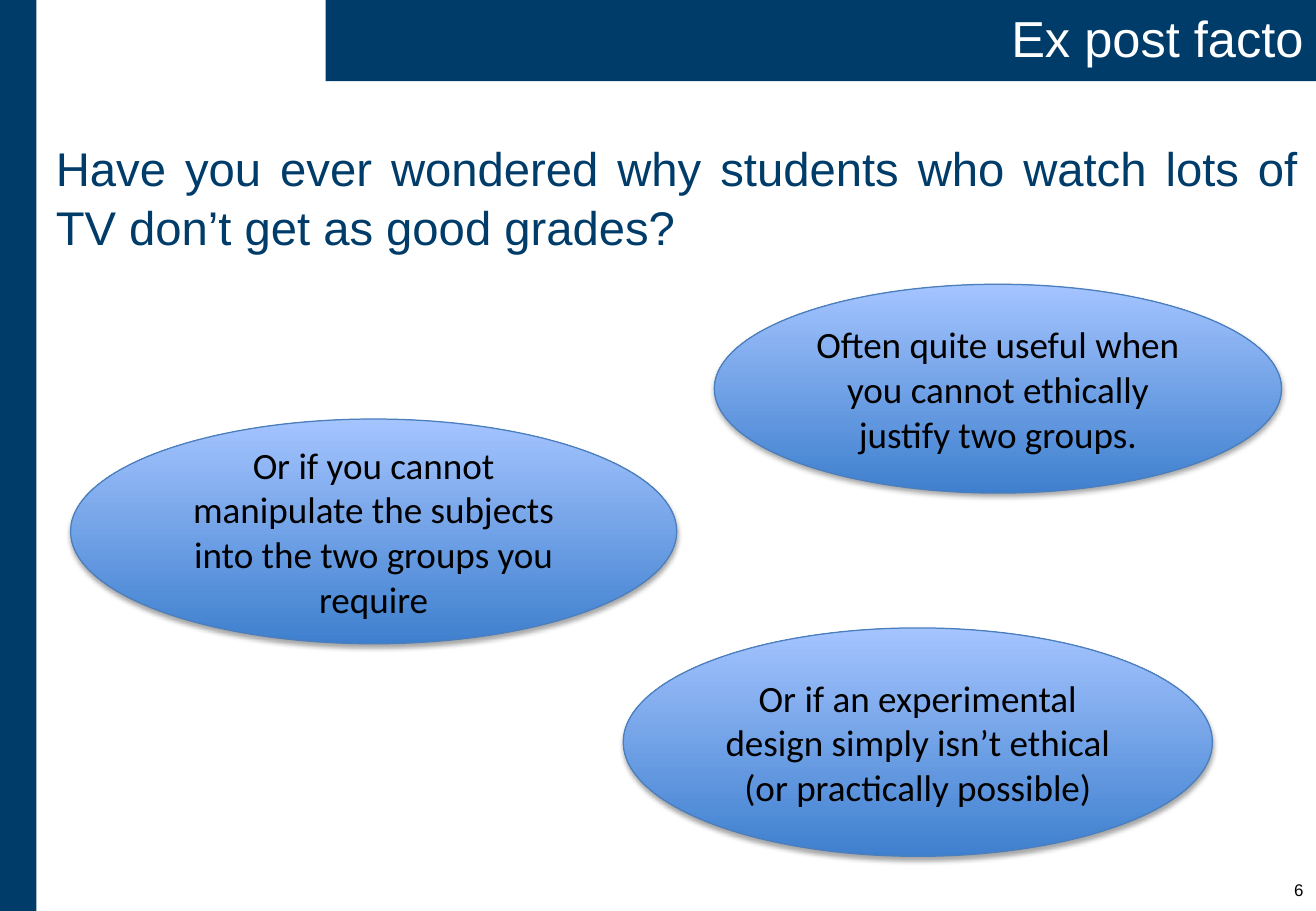
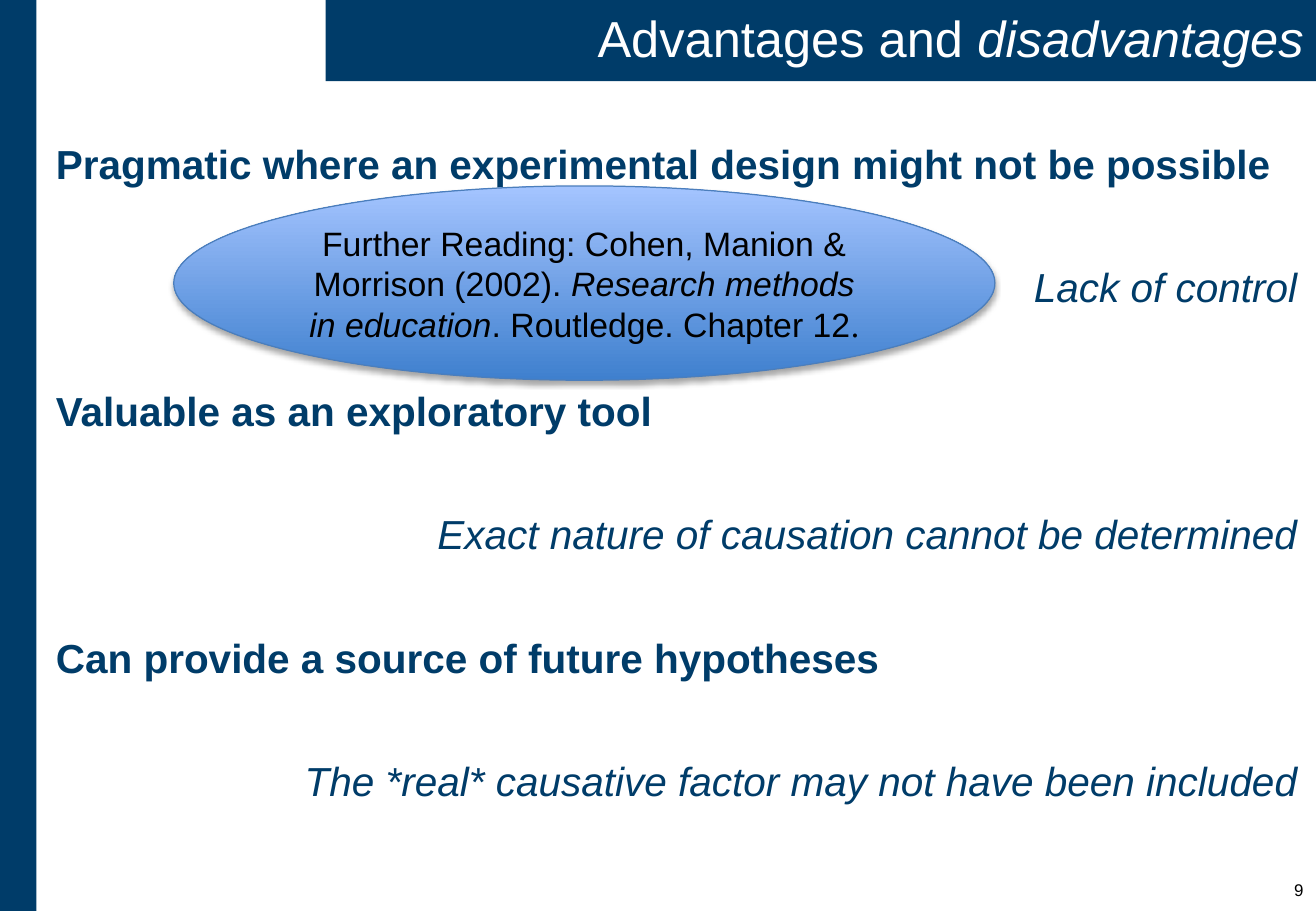
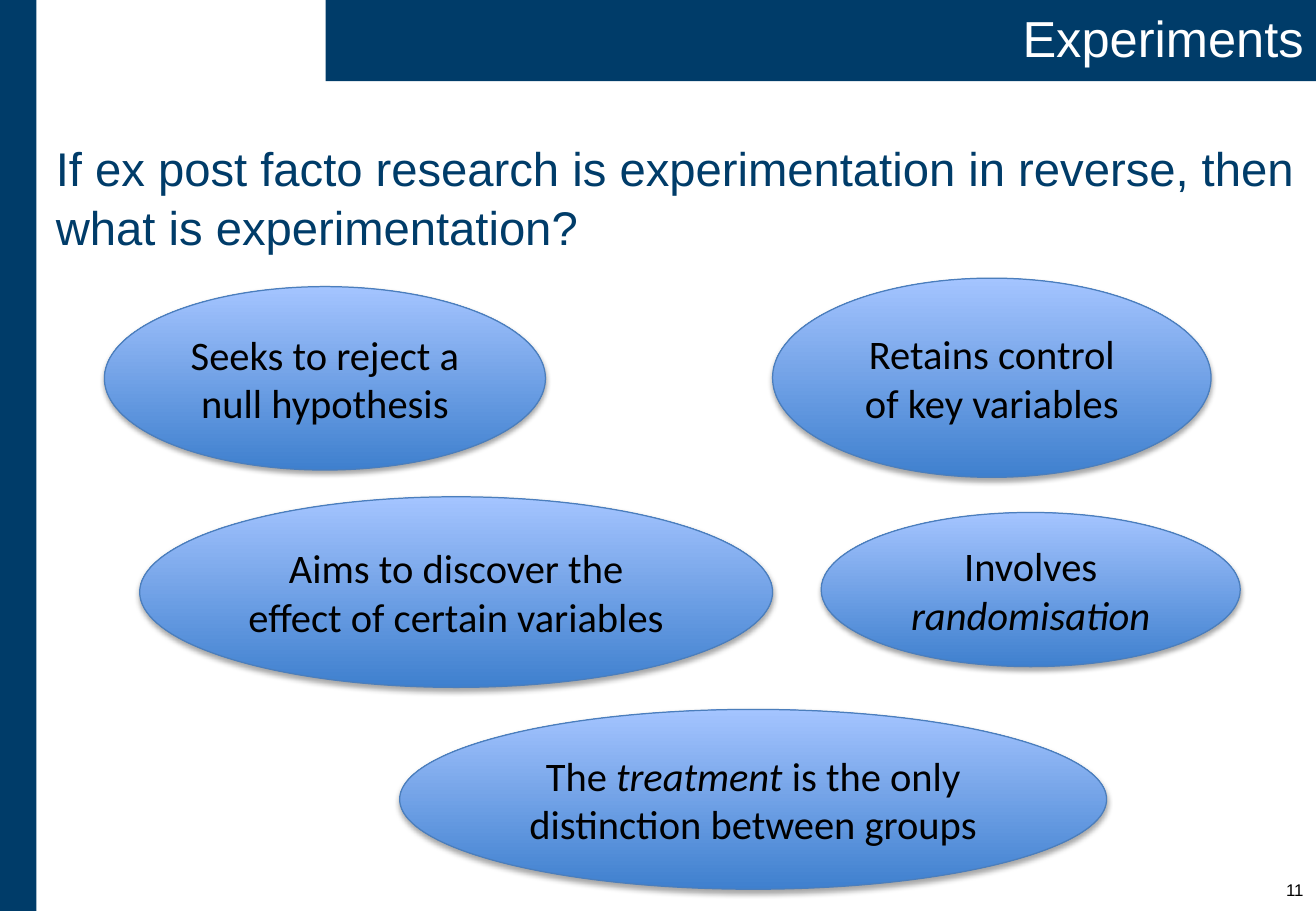
from dataclasses import dataclass

from lxml import etree
from pptx import Presentation
from pptx.dml.color import RGBColor
from pptx.enum import shapes, text
from pptx.oxml import ns
from pptx.util import Pt

LEFT, CENTER, RIGHT, JUSTIFY = (
    text.PP_ALIGN.LEFT, text.PP_ALIGN.CENTER, text.PP_ALIGN.RIGHT, text.PP_ALIGN.JUSTIFY)


@dataclass(frozen=True)
class Theme:
    navy: RGBColor = RGBColor(0x00, 0x3C, 0x69)
    white: RGBColor = RGBColor(0xFF, 0xFF, 0xFF)
    black: RGBColor = RGBColor(0, 0, 0)
    bubble_bottom: RGBColor = RGBColor(0x3F, 0x80, 0xCE)
    bubble_top: RGBColor = RGBColor(0xA4, 0xC4, 0xFF)
    bubble_edge: RGBColor = RGBColor(0x4B, 0x7E, 0xBC)
    sans: str = "Arial"
    bubble_font: str = "Calibri"
    title_size: float = 30
    question_size: float = 28
    point_size: float = 24
    number_size: float = 10
    line_spacing: float = 1.05
    point_gap: float = 43


THEME = Theme()


@dataclass(frozen=True)
class Box:
    left: float
    top: float
    width: float
    height: float

    def lengths(self) -> tuple:
        return Pt(self.left), Pt(self.top), Pt(self.width), Pt(self.height)


SLIDE = Box(0, 0, 780, 540)
SIDE_BAND = Box(0, 0, 21.6, 540)
TITLE_BAND = Box(193, 0, 587, 48.2)
BODY = Box(33.1, 77.8, 735.8, 429.1)
NUMBER = Box(717.1, 517.7, 62.6, 22.3)


@dataclass(frozen=True)
class Span:
    words: str
    italic: bool = False
    bold: bool = False
    font: str = ""


@dataclass(frozen=True)
class Line:
    spans: tuple
    align: text.PP_ALIGN = LEFT


@dataclass(frozen=True)
class Bubble:
    box: Box
    spans: tuple


@dataclass(frozen=True)
class Page:
    number: int
    title: tuple
    body: tuple
    body_size: float
    bubbles: tuple
    bubble_size: float
    bubble_font: str = THEME.bubble_font


def plain(words: str) -> tuple:
    return (Span(words),)


def advantage(words: str) -> Line:
    return Line((Span(words, bold=True),))


def disadvantage(words: str) -> Line:
    return Line((Span(words, italic=True),), RIGHT)


def write(paragraph, line: Line, size: float, color: RGBColor, font: str = THEME.sans) -> None:
    paragraph.alignment = line.align
    for span in line.spans:
        run = paragraph.add_run()
        run.text = span.words
        run.font.name = span.font or font
        run.font.size = Pt(size)
        run.font.color.rgb = color
        run.font.bold = span.bold
        run.font.italic = span.italic


def set_margins(frame, left: float, top: float, right: float, bottom: float) -> None:
    frame.margin_left, frame.margin_top = Pt(left), Pt(top)
    frame.margin_right, frame.margin_bottom = Pt(right), Pt(bottom)


def fill_navy(shape) -> None:
    shape.fill.solid()
    shape.fill.fore_color.rgb = THEME.navy


def add_frame(slide, page: Page) -> None:
    """Draw the side band, title band and page number."""
    band = slide.shapes.add_shape(shapes.MSO_SHAPE.RECTANGLE, *SIDE_BAND.lengths())
    fill_navy(band)
    band.line.fill.background()
    band.shadow.inherit = False

    title = slide.shapes.title
    title.left, title.top, title.width, title.height = TITLE_BAND.lengths()
    fill_navy(title)
    frame = title.text_frame
    frame.auto_size = text.MSO_AUTO_SIZE.NONE
    frame.vertical_anchor = text.MSO_ANCHOR.MIDDLE
    set_margins(frame, 5.8, 2.9, 7.2, 2.9)
    frame.paragraphs[0].line_spacing = 0.9
    write(frame.paragraphs[0], Line(page.title, RIGHT), THEME.title_size, THEME.white)

    number = slide.shapes.add_textbox(*NUMBER.lengths()).text_frame
    number.word_wrap = True
    write(number.paragraphs[0], Line(plain(str(page.number)), RIGHT),
          THEME.number_size, THEME.black)


def add_body(slide, lines: tuple, size: float) -> None:
    frame = slide.shapes.add_textbox(*BODY.lengths()).text_frame
    frame.word_wrap = True
    set_margins(frame, 0, 3, 0, 0)
    for index, line in enumerate(lines):
        paragraph = frame.add_paragraph() if index else frame.paragraphs[0]
        paragraph.line_spacing = THEME.line_spacing
        if index:
            paragraph.space_before = Pt(THEME.point_gap)
        write(paragraph, line, size, THEME.navy)


def add_soft_shadow(shape) -> None:
    shape.shadow.inherit = False
    effects = shape.element.spPr.find(ns.qn("a:effectLst"))
    shadow = etree.SubElement(
        effects, ns.qn("a:outerShdw"), blurRad=str(Pt(3.1)), dist=str(Pt(1.8)),
        dir="5400000", rotWithShape="0")
    color = etree.SubElement(shadow, ns.qn("a:srgbClr"), val=str(THEME.black))
    etree.SubElement(color, ns.qn("a:alpha"), val="35000")


def add_bubble(slide, bubble: Bubble, size: float, font: str) -> None:
    oval = slide.shapes.add_shape(shapes.MSO_SHAPE.OVAL, *bubble.box.lengths())
    oval.fill.gradient()
    oval.fill.gradient_angle = 90
    for stop, color in zip(oval.fill.gradient_stops, (THEME.bubble_bottom, THEME.bubble_top)):
        stop.color.rgb = color
    for stop, position in zip(oval.fill.gradient_stops, (0, 1)):
        stop.position = position
    oval.line.color.rgb = THEME.bubble_edge
    oval.line.width = Pt(0.75)
    add_soft_shadow(oval)
    frame = oval.text_frame
    frame.word_wrap = True
    frame.vertical_anchor = text.MSO_ANCHOR.MIDDLE
    write(frame.paragraphs[0], Line(bubble.spans, CENTER), size, THEME.black, font)


PAGES = (
    Page(
        6, plain("Ex post facto"),
        (Line(plain("Have you ever wondered why students who watch lots of TV "
                    "don’t get as good grades?"), JUSTIFY),),
        THEME.question_size,
        (
            Bubble(Box(423.4, 168.5, 336.2, 123.8),
                   plain("Often quite useful when you cannot ethically justify two groups.")),
            Bubble(Box(41.8, 248.4, 359.3, 133.2),
                   plain("Or if you cannot manipulate the subjects into the two groups "
                         "you require")),
            Bubble(Box(369.4, 372.2, 349.2, 135.4),
                   plain("Or if an experimental design simply isn’t ethical "
                         "(or practically possible)")),
        ), 22),
    Page(
        9, (Span("Advantages and "), Span("disadvantages", italic=True)),
        (
            advantage("Pragmatic where an experimental design might not be possible"),
            disadvantage("Lack of control"),
            advantage("Valuable as an exploratory tool"),
            disadvantage("Exact nature of causation cannot be determined"),
            advantage("Can provide a source of future hypotheses"),
            disadvantage("The *real* causative factor may not have been included"),
        ), THEME.point_size,
        (
            Bubble(Box(103, 110.2, 486.7, 115.2), (
                Span("Further Reading: Cohen, Manion & Morrison (2002). "),
                Span("Research methods in education", italic=True),
                Span(". Routledge. Chapter 12"),
                Span(".", font="Times New Roman"))),
        ), 20, THEME.sans),
    Page(
        11, plain("Experiments"),
        (Line(plain("If ex post facto research is experimentation in reverse, "
                    "then what is experimentation?")),),
        THEME.question_size,
        (
            Bubble(Box(457.9, 164.9, 259.9, 118.1), plain("Retains control of key variables")),
            Bubble(Box(61.9, 169.9, 261.4, 108.7), plain("Seeks to reject a null hypothesis")),
            Bubble(Box(82.8, 294.5, 375.1, 113),
                   plain("Aims to discover the effect of certain variables")),
            Bubble(Box(486.7, 303.8, 248.4, 91.4),
                   (Span("Involves "), Span("randomisation", italic=True))),
            Bubble(Box(236.9, 420.5, 419, 106.6), (
                Span("The "), Span("treatment", italic=True),
                Span(" is the only distinction between groups"))),
        ), 24),
)


def main() -> None:
    deck = Presentation()
    deck.slide_width, deck.slide_height = Pt(SLIDE.width), Pt(SLIDE.height)
    title_only = deck.slide_layouts[5]
    for page in PAGES:
        slide = deck.slides.add_slide(title_only)
        add_frame(slide, page)
        add_body(slide, page.body, page.body_size)
        for bubble in page.bubbles:
            add_bubble(slide, bubble, page.bubble_size, page.bubble_font)
    deck.save("out.pptx")


if __name__ == "__main__":
    main()
